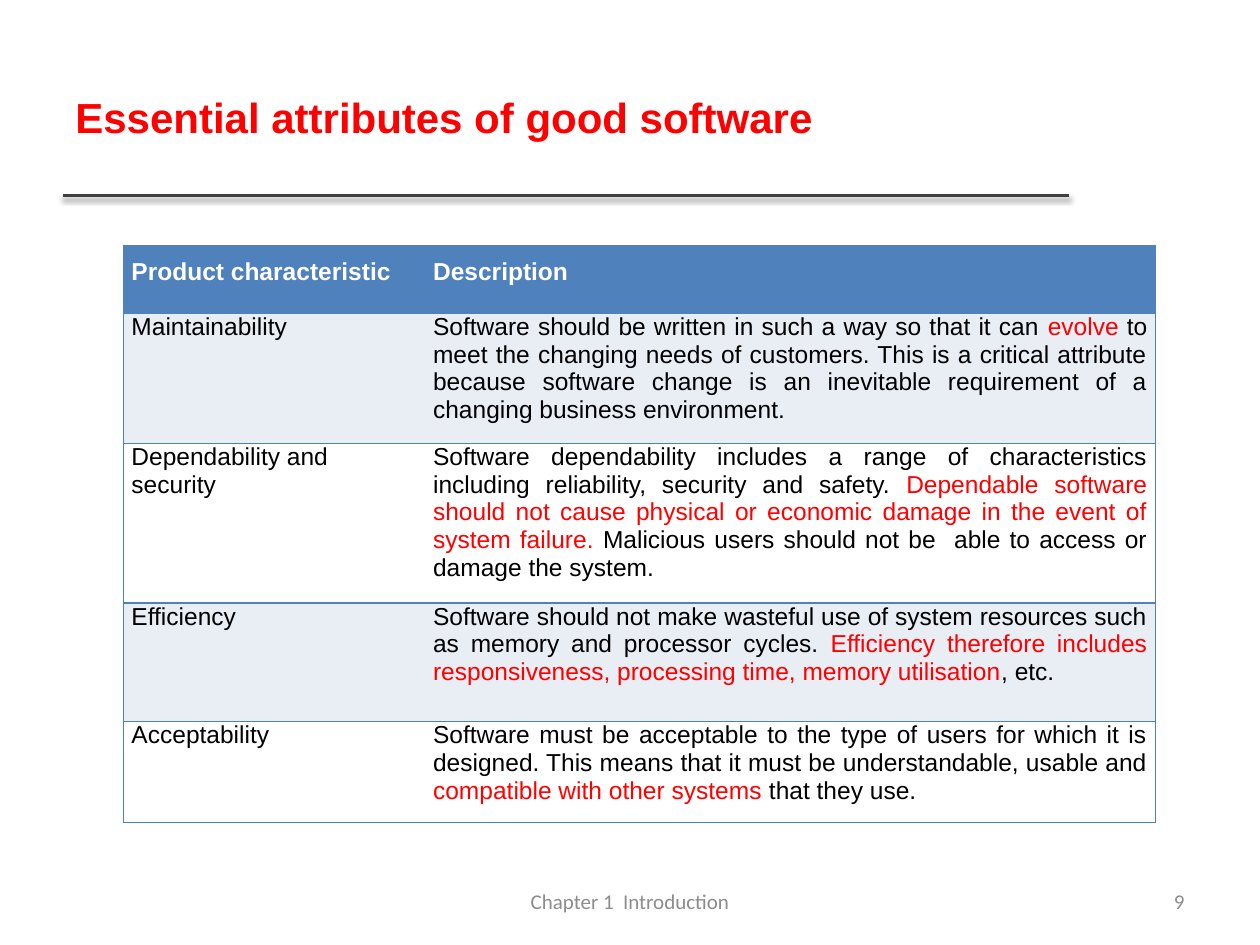
from lxml import etree
from pptx import Presentation
from pptx.dml.color import RGBColor
from pptx.enum import shapes, text
from pptx.oxml import ns
from pptx.util import Cm, Pt

RED, BLUE, BLACK, WHITE, PALE, GREY = "FF0000", "4F81BD", "000000", "FFFFFF", "E9EDF4", "8C8C8C"
LEFT, MID, RIGHT, FULL = (getattr(text.PP_ALIGN, n) for n in ("LEFT", "CENTER", "RIGHT", "JUSTIFY"))

HEAD = ["Product characteristic", "Description"]
ROWS = [
    ("Maintainability", FULL, [
        ("Software should be written in such a way so that it can ", BLACK),
        ("evolve", RED),
        (" to meet the changing needs of customers. This is a critical attribute because "
         "software change is an inevitable requirement of a changing business environment.", BLACK)]),
    ("Dependability and security", LEFT, [
        ("Software dependability includes a range of characteristics including reliability, "
         "security and safety. ", BLACK),
        ("Dependable software should not cause physical or economic damage in the event of "
         "system failure.", RED),
        (" Malicious users should not be  able to access or damage the system.", BLACK)]),
    ("Efficiency", FULL, [
        ("Software should not make wasteful use of system resources such as memory and "
         "processor cycles. ", BLACK),
        ("Efficiency therefore includes responsiveness, processing time, memory utilisation", RED),
        (", etc.", BLACK)]),
    ("Acceptability", FULL, [
        ("Software must be acceptable to the type of users for which it is designed. This "
         "means that it must be understandable, usable and ", BLACK),
        ("compatible with other systems ", RED),
        ("that they use. ", BLACK)]),
]


def paint(hue):
    """Turn a hex string into a colour."""
    return RGBColor.from_string(hue)


def node(root, tag, **attrs):
    """Append a drawing element and return it."""
    return etree.SubElement(root, ns.qn(tag), attrs)


def write(para, runs, size, font="Arial", bold=False, align=LEFT):
    """Fill a paragraph run by run from (words, colour) pairs."""
    para.alignment = align
    for words, hue in runs:
        run = para.add_run()
        run.text = words
        run.font.size, run.font.name, run.font.bold = Pt(size), font, bold
        run.font.color.rgb = paint(hue)


def label(slide, box, words, hue, size, **style):
    """Place one line of text, centred in height, in a box."""
    frame = slide.shapes.add_textbox(*map(Cm, box)).text_frame
    frame.word_wrap = True
    frame.vertical_anchor = text.MSO_ANCHOR.MIDDLE
    write(frame.paragraphs[0], [(words, hue)], size, **style)


def header(slide, x, y, w, h):
    """Draw the title with a shadowed rule along its foot."""
    rule = slide.shapes.add_connector(
        shapes.MSO_CONNECTOR.STRAIGHT, Cm(x), Cm(y + h), Cm(x + w), Cm(y + h))
    rule.line.color.rgb, rule.line.width = paint("404040"), Pt(2)
    glow = node(node(rule._element.spPr, "a:effectLst"), "a:outerShdw",
                blurRad="40000", dist="20000", dir="5400000", rotWithShape="0")
    node(node(glow, "a:srgbClr", val=BLACK), "a:alpha", val="38000")
    label(slide, (x, y, w, h), "Essential attributes of good software", RED, 24, bold=True)


def edge(cell, sides):
    """Rule the named sides of a cell in blue and clear the others."""
    props = cell._tc.get_or_add_tcPr()
    for spot, side in enumerate("LRTB"):
        line = etree.Element(ns.qn("a:ln" + side), w=str(Pt(1)))
        if side in sides:
            node(node(line, "a:solidFill"), "a:srgbClr", val=BLUE)
        else:
            node(line, "a:noFill")
        props.insert(spot, line)


def fill(cell, runs, back, top, sides, **style):
    """Set the text, margins, fill and edges of a cell."""
    cell.margin_left = cell.margin_right = Cm(0.16)
    cell.margin_top, cell.margin_bottom = Cm(top), Cm(0.25)
    write(cell.text_frame.paragraphs[0], runs, 14, **style)
    cell.fill.solid()
    cell.fill.fore_color.rgb = paint(back)
    edge(cell, sides)


def grid(slide, x, y, widths, heights):
    """Build the table of attributes."""
    frame = slide.shapes.add_table(
        len(heights), len(widths), Cm(x), Cm(y), Cm(sum(widths)), Cm(sum(heights)))
    table = frame.table
    for col, wide in zip(table.columns, widths):
        col.width = Cm(wide)
    for row, high in zip(table.rows, heights):
        row.height = Cm(high)
    ends = ("LTB", "RTB")
    for col, words in enumerate(HEAD):
        fill(table.cell(0, col), [(words, WHITE)], BLUE, 0.25, ends[col], bold=True, align=FULL)
    for row, (name, align, runs) in enumerate(ROWS, 1):
        back = PALE if row % 2 else WHITE
        fill(table.cell(row, 0), [(name, BLACK)], back, 0, ends[0], align=align)
        fill(table.cell(row, 1), runs, back, 0, ends[1], align=FULL)


def footer(slide, x, y, w, h):
    """Place the chapter name in the middle and the page number at the right."""
    mid, end = 8.05, 5.92
    style = {"font": "Calibri"}
    label(slide, (x + (w - mid) / 2, y, mid, h), "Chapter 1  Introduction", GREY, 12,
          align=MID, **style)
    label(slide, (x + w - end, y, end, h), "9", GREY, 12, align=RIGHT, **style)


def main():
    """Build and save the slide."""
    deck = Presentation()
    deck.slide_width, deck.slide_height = Cm(25.4), Cm(19.05)
    slide = deck.slides.add_slide(deck.slide_layouts[6])
    header(slide, 1.27, 0.76, 20.28, 3.18)
    footer(slide, 1.27, 17.65, 22.86, 1.02)
    grid(slide, 2.49, 4.95, (6.08, 14.72), (1.37, 2.39, 2.9, 2.39, 1.88))
    deck.save("out.pptx")


if __name__ == "__main__":
    main()
